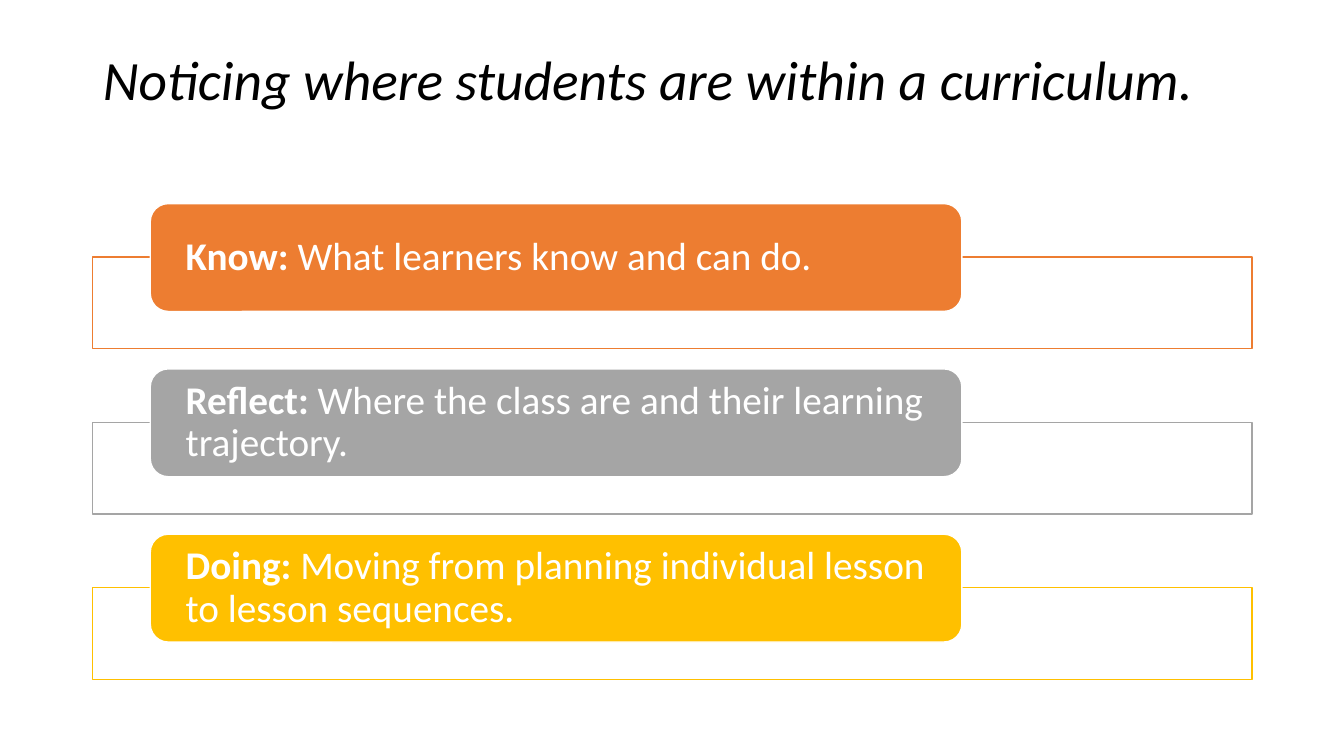
from dataclasses import dataclass

from lxml.etree import SubElement
from pptx import Presentation
from pptx.dml.color import RGBColor
from pptx.enum.shapes import MSO_SHAPE
from pptx.enum.text import MSO_ANCHOR, MSO_AUTO_SIZE, PP_ALIGN
from pptx.oxml.ns import qn
from pptx.util import Inches, Pt


@dataclass(frozen=True)
class Theme:
    font: str = "Calibri"
    ink: str = "000000"
    paper: str = "FFFFFF"
    know: str = "ED7D31"
    reflect: str = "A5A5A5"
    doing: str = "FFC000"
    title_size: float = 39.6
    stage_size: float = 28
    line_width: float = 1
    frame_opacity: int = 90


def apply(target, values):
    for name, value in values.items():
        setattr(target, name, value)


class CurriculumSlide:
    def __init__(self, deck, theme):
        self.theme = theme
        self.slide = deck.slides.add_slide(deck.slide_layouts[5])

    def wording(self, frame, runs, size, color, layout):
        apply(frame, {"word_wrap": True, "auto_size": MSO_AUTO_SIZE.NONE, **layout})
        paragraph = frame.paragraphs[0]
        apply(paragraph, {"alignment": PP_ALIGN.LEFT, "line_spacing": 0.9})
        for words, emphasis in runs:
            run = paragraph.add_run()
            run.text = words
            apply(run.font, {"name": self.theme.font, "size": Pt(size), **emphasis})
            run.font.color.rgb = RGBColor.from_string(color)

    def title(self, words):
        heading = self.slide.shapes.title
        apply(heading, {"left": Inches(0.92), "top": Inches(0.4),
                        "width": Inches(11.5), "height": Inches(1.45)})
        self.wording(heading.text_frame, [(words, {"italic": True})],
                     self.theme.title_size, self.theme.ink,
                     {"vertical_anchor": MSO_ANCHOR.TOP, "margin_top": Inches(0.12)})

    def panel(self, kind, left, top, width, height, fill, line):
        shape = self.slide.shapes.add_shape(
            kind, Inches(left), Inches(top), Inches(width), Inches(height))
        shape.shadow.inherit = False
        shape.fill.solid()
        shape.fill.fore_color.rgb = RGBColor.from_string(fill)
        shape.line.color.rgb = RGBColor.from_string(line)
        shape.line.width = Pt(self.theme.line_width)
        return shape

    def frame(self, top, color):
        frame = self.panel(MSO_SHAPE.RECTANGLE, 0.92, top, 11.5, 0.91,
                           self.theme.paper, color)
        tint = frame.element.spPr.find(qn("a:solidFill"))[0]
        SubElement(tint, qn("a:alpha"), val=str(self.theme.frame_opacity * 1000))

    def stage(self, top, color, label, description):
        self.frame(top + 0.53, color)
        card = self.panel(MSO_SHAPE.ROUNDED_RECTANGLE, 1.49, top, 8.05, 1.07,
                          color, self.theme.paper)
        self.wording(card.text_frame,
                     [(f"{label}: ", {"bold": True}), (description, {"bold": False})],
                     self.theme.stage_size, self.theme.paper,
                     {"vertical_anchor": MSO_ANCHOR.MIDDLE,
                      "margin_left": Inches(0.3), "margin_right": Inches(0.3),
                      "margin_top": 0, "margin_bottom": 0})


def main():
    deck = Presentation()
    apply(deck, {"slide_width": Inches(13.33), "slide_height": Inches(7.5)})
    theme = Theme()
    page = CurriculumSlide(deck, theme)
    page.title("Noticing where students are within a curriculum.")
    stages = [
        (theme.know, "Know", "What learners know and can do."),
        (theme.reflect, "Reflect", "Where the class are and their learning trajectory."),
        (theme.doing, "Doing", "Moving from planning individual lesson to lesson sequences."),
    ]
    first_top, pitch = 2.02, 1.64
    for row, (color, label, description) in enumerate(stages):
        page.stage(first_top + row * pitch, color, label, description)
    deck.save("out.pptx")


if __name__ == "__main__":
    main()
